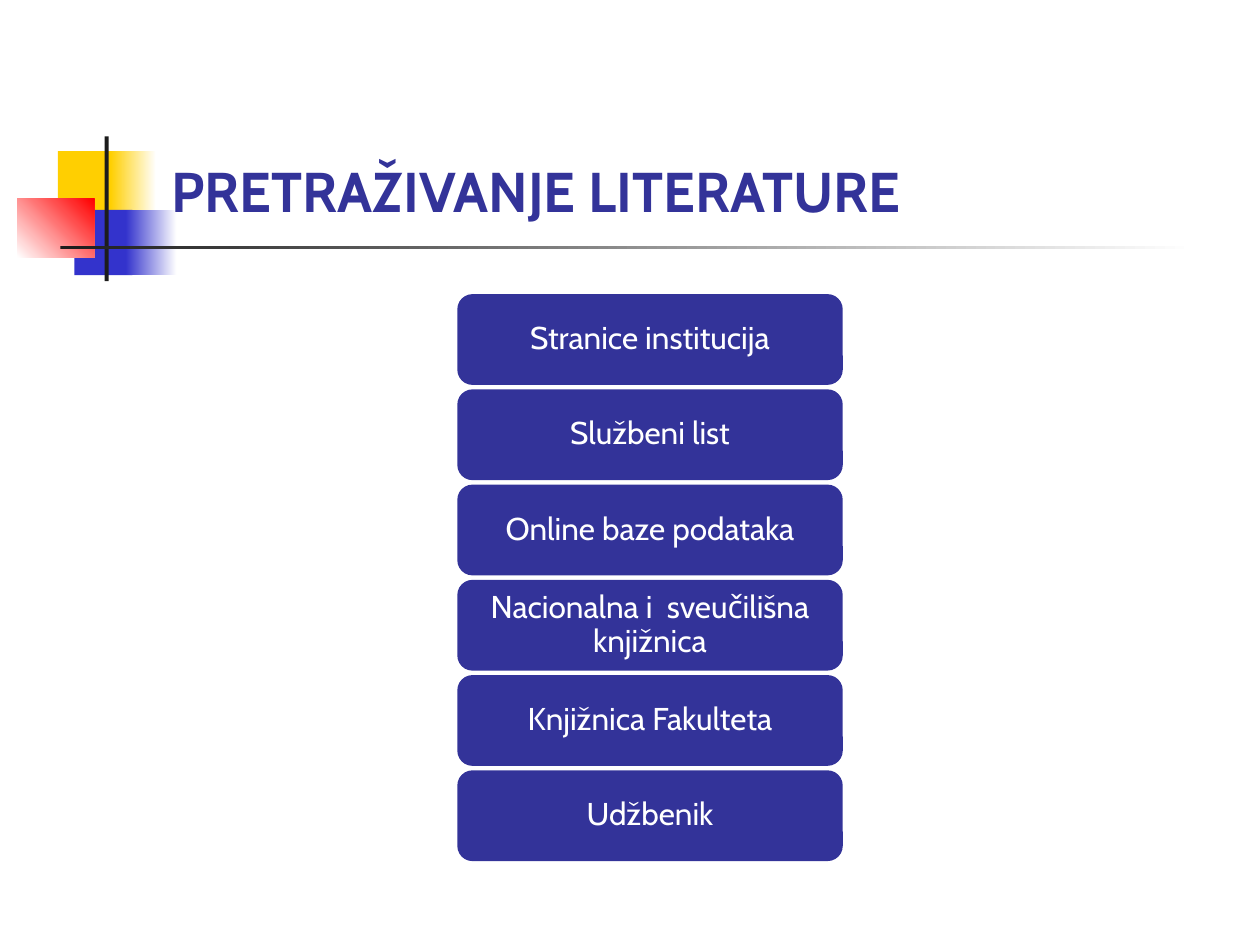
from pptx import Presentation
from pptx.dml.color import RGBColor
from pptx.enum.shapes import MSO_SHAPE
from pptx.enum.text import MSO_ANCHOR, PP_ALIGN
from pptx.util import Cm, Pt

# Content
TITLE = "PRETRAŽIVANJE LITERATURE"
SOURCES = [
    "Stranice institucija",
    "Službeni list",
    "Online baze podataka",
    "Nacionalna i  sveučilišna knjižnica",
    "Knjižnica Fakulteta",
    "Udžbenik",
]

FONT = "Cabin"
NAVY, WHITE, BLACK = "333399", "FFFFFF", "1C1C1C"
YELLOW, BLUE, RED = "FFCF01", "3333CC", "FF0000"

# Decoration: left, top, width, height (cm), colours, gradient angle
DECORATION = [
    (1.17, 3.05, 1.22, 1.32, [YELLOW], 0),
    (2.23, 3.05, 0.92, 1.32, [YELLOW, WHITE], 0),
    (1.5, 4.23, 1.17, 1.32, [BLUE], 0),
    (2.54, 4.23, 1.02, 1.32, [BLUE, WHITE], 0),
    (0.35, 4.01, 1.55, 1.18, [WHITE, RED], 45),
    (2.11, 2.75, 0.08, 2.92, [BLACK], 0),
    (1.22, 4.95, 22.86, 0.08, [BLACK, WHITE], 0),
]

# Stack of cards (cm)
CARD_LEFT, CARD_TOP, CARD_W, CARD_H = 9.22, 5.93, 7.77, 1.83
CARD_STEP = 1.92


def rgb(value):
    return RGBColor.from_string(value)


def add_block(s, kind, box, colours, angle=0):
    sp = s.shapes.add_shape(kind, *(Cm(v) for v in box))
    sp.shadow.inherit = False
    sp.line.fill.background()
    if len(colours) == 1:
        sp.fill.solid()
        sp.fill.fore_color.rgb = rgb(colours[0])
    else:
        sp.fill.gradient()
        sp.fill.gradient_angle = angle
        for stop, colour, position in zip(sp.fill.gradient_stops, colours, (0, 1)):
            stop.color.rgb = rgb(colour)
            stop.position = position
    return sp


def add_text(p, text, size, colour, bold=False):
    r = p.add_run()
    r.text = text
    r.font.name = FONT
    r.font.size = Pt(size)
    r.font.bold = bold
    r.font.color.rgb = rgb(colour)


prs = Presentation()
prs.slide_width, prs.slide_height = Cm(25.4), Cm(19.05)
s = prs.slides.add_slide(prs.slide_layouts[5])

# Decoration beside the title
for *box, colours, angle in DECORATION:
    add_block(s, MSO_SHAPE.RECTANGLE, box, colours, angle)

# Title, in front of the decoration
title = s.shapes.title
title.left, title.top, title.width, title.height = Cm(3.2), Cm(0.58), Cm(21.64), Cm(4.06)
title.element.getparent().append(title.element)
tf = title.text_frame
tf.word_wrap = True
tf.vertical_anchor = MSO_ANCHOR.BOTTOM
p = tf.paragraphs[0]
p.alignment = PP_ALIGN.LEFT
add_text(p, TITLE, 32, NAVY, bold=True)

# Cards, one for each source of literature
for i, source in enumerate(SOURCES):
    box = (CARD_LEFT, CARD_TOP + i * CARD_STEP, CARD_W, CARD_H)
    card = add_block(s, MSO_SHAPE.ROUNDED_RECTANGLE, box, [NAVY])
    tf = card.text_frame
    tf.word_wrap = True
    tf.vertical_anchor = MSO_ANCHOR.MIDDLE
    tf.margin_left = tf.margin_right = Cm(0.27)
    tf.margin_top = tf.margin_bottom = Cm(0.19)
    p = tf.paragraphs[0]
    p.alignment = PP_ALIGN.CENTER
    p.line_spacing = 0.9
    add_text(p, source, 18, WHITE)

prs.save("out.pptx")
